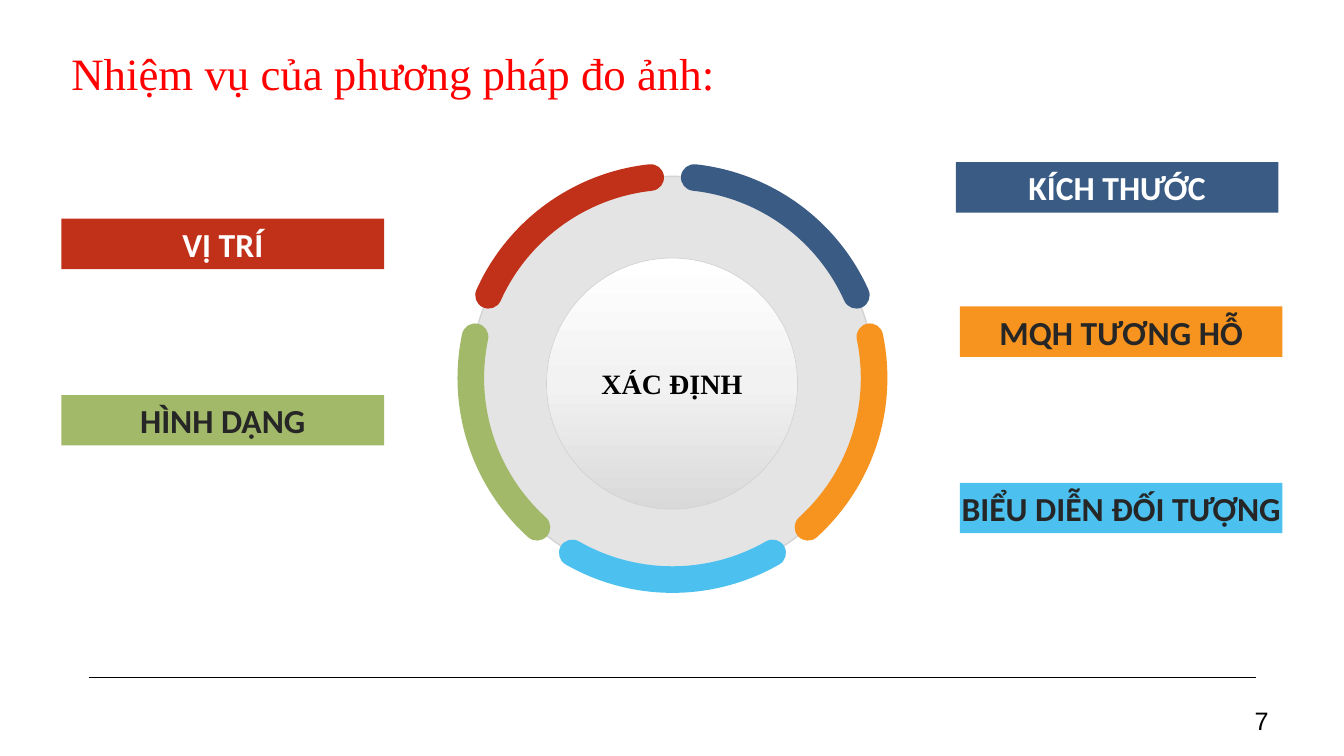
from copy import deepcopy

from lxml.etree import SubElement
from pptx import Presentation
from pptx.dml.color import RGBColor
from pptx.enum.shapes import MSO_CONNECTOR as Connector, MSO_SHAPE as Shape
from pptx.enum.text import MSO_ANCHOR as Anchor, MSO_AUTO_SIZE as AutoSize, PP_ALIGN as Align
from pptx.oxml.ns import qn
from pptx.util import Inches, Pt

COLORS = {
    "black": "000000", "white": "FFFFFF", "dark": "262626", "title": "FF0000",
    "grey": "D3D3D3", "light": "F2F2F2", "shade": "D9D9D9",
    "red": "C13018", "green": "A2B969", "navy": "3A5C84",
    "orange": "F7931F", "sky": "4CC1EF",
}
SERIF, SANS, NUMBER = "Times New Roman", "Calibri", "Arial"


def color(name):
    return RGBColor.from_string(COLORS[name])


class SlideBuilder:
    def __init__(self, slide):
        self.shapes = slide.shapes

    def set_text(self, shape, text, font, size, ink, bold=False, align=Align.LEFT, **frame_format):
        frame = shape.text_frame
        for name, value in {"word_wrap": True, **frame_format}.items():
            setattr(frame, name, value)
        paragraph = frame.paragraphs[0]
        paragraph.alignment = align
        run = paragraph.add_run()
        run.text = text
        for name, value in {"name": font, "size": Pt(size), "bold": bold}.items():
            setattr(run.font, name, value)
        run.font.color.rgb = color(ink)

    def text(self, box, *content, **text_format):
        self.set_text(self.shapes.add_textbox(*map(Inches, box)), *content, **text_format)

    def shape(self, kind, box, fill=None, line=None, width=1):
        shape = self.shapes.add_shape(kind, *map(Inches, box))
        shape.shadow.inherit = False
        if fill:
            shape.fill.solid()
            shape.fill.fore_color.rgb = color(fill)
        else:
            shape.fill.background()
        if line:
            shape.line.color.rgb = color(line)
            shape.line.width = Pt(width)
        else:
            shape.line.fill.background()
        return shape

    def disc(self, box, opacity):
        disc = self.shape(Shape.OVAL, box, "grey", "grey")
        tint = disc._element.spPr.find(qn("a:solidFill"))[0]
        SubElement(tint, qn("a:alpha")).set("val", str(opacity * 1000))

    def hub(self, box, text, stops):
        hub = self.shape(Shape.OVAL, box, line="grey", width=0.5)
        hub.fill.gradient()
        hub.fill.gradient_angle = 270
        stop_list = hub._element.spPr.find(qn("a:gradFill")).find(qn("a:gsLst"))
        stop_list.append(deepcopy(stop_list[-1]))
        for stop, (position, name) in zip(hub.fill.gradient_stops, stops):
            stop.position = position
            stop.color.rgb = color(name)
        self.set_text(hub, text, SERIF, 20, "black", True, Align.CENTER,
                      vertical_anchor=Anchor.MIDDLE)

    def arc(self, box, middle, span, name):
        arc = self.shape(Shape.ARC, box, line=name, width=19)
        # Angles are stored in 60000ths of a degree, adjustments in 100000ths
        for index, angle in enumerate((middle - span / 2, middle + span / 2)):
            arc.adjustments[index] = angle % 360 * 0.6
        arc._element.spPr.find(qn("a:ln")).set("cap", "rnd")

    def label(self, left, top, text, fill, ink):
        label = self.shape(Shape.RECTANGLE, (left, top, 3.2, 0.5), fill)
        self.set_text(label, text, SANS, 24, ink, True, Align.CENTER,
                      margin_left=0, margin_right=0, vertical_anchor=Anchor.BOTTOM,
                      auto_size=AutoSize.SHAPE_TO_FIT_TEXT)

    def rule(self, left, right, top):
        ends = map(Inches, (left, top, right, top))
        rule = self.shapes.add_connector(Connector.STRAIGHT, *ends)
        rule.line.color.rgb = color("black")
        rule.line.width = Pt(1)
        SubElement(rule._element.spPr, qn("a:effectLst"))


def main():
    presentation = Presentation()
    presentation.slide_width = Inches(13.33)
    presentation.slide_height = Inches(7.5)
    builder = SlideBuilder(presentation.slides.add_slide(presentation.slide_layouts[6]))

    # Footer and title
    builder.rule(0.88, 12.46, 6.72)
    builder.text((11.94, 6.95, 0.74, 0.4), "7", NUMBER, 18, "black",
                 align=Align.RIGHT, vertical_anchor=Anchor.MIDDLE)
    builder.text((0.61, 0.4, 6.67, 0.64), "Nhiệm vụ của phương pháp đo ảnh:",
                 SERIF, 32, "title", auto_size=AutoSize.SHAPE_TO_FIT_TEXT)

    # Wheel: five equal arcs, clockwise from the bottom
    wheel = (4.67, 1.75, 4, 4)
    builder.disc(wheel, 60)
    builder.hub((5.42, 2.56, 2.49, 2.49), "XÁC ĐỊNH",
                [(0, "white"), (0.5, "light"), (1, "shade")])
    arc_colors = ["sky", "green", "red", "navy", "orange"]
    for index, name in enumerate(arc_colors):
        builder.arc(wheel, 90 + index * 360 / len(arc_colors), 59.6, name)

    # Labels
    for label in [
        (0.61, 2.17, "VỊ TRÍ", "red", "white"),
        (0.61, 3.92, "HÌNH DẠNG", "green", "dark"),
        (9.48, 1.61, "KÍCH THƯỚC", "navy", "white"),
        (9.52, 3.04, "MQH TƯƠNG HỖ", "orange", "dark"),
        (9.52, 4.79, "BIỂU DIỄN ĐỐI TƯỢNG", "sky", "dark"),
    ]:
        builder.label(*label)

    presentation.save("out.pptx")


if __name__ == "__main__":
    main()
